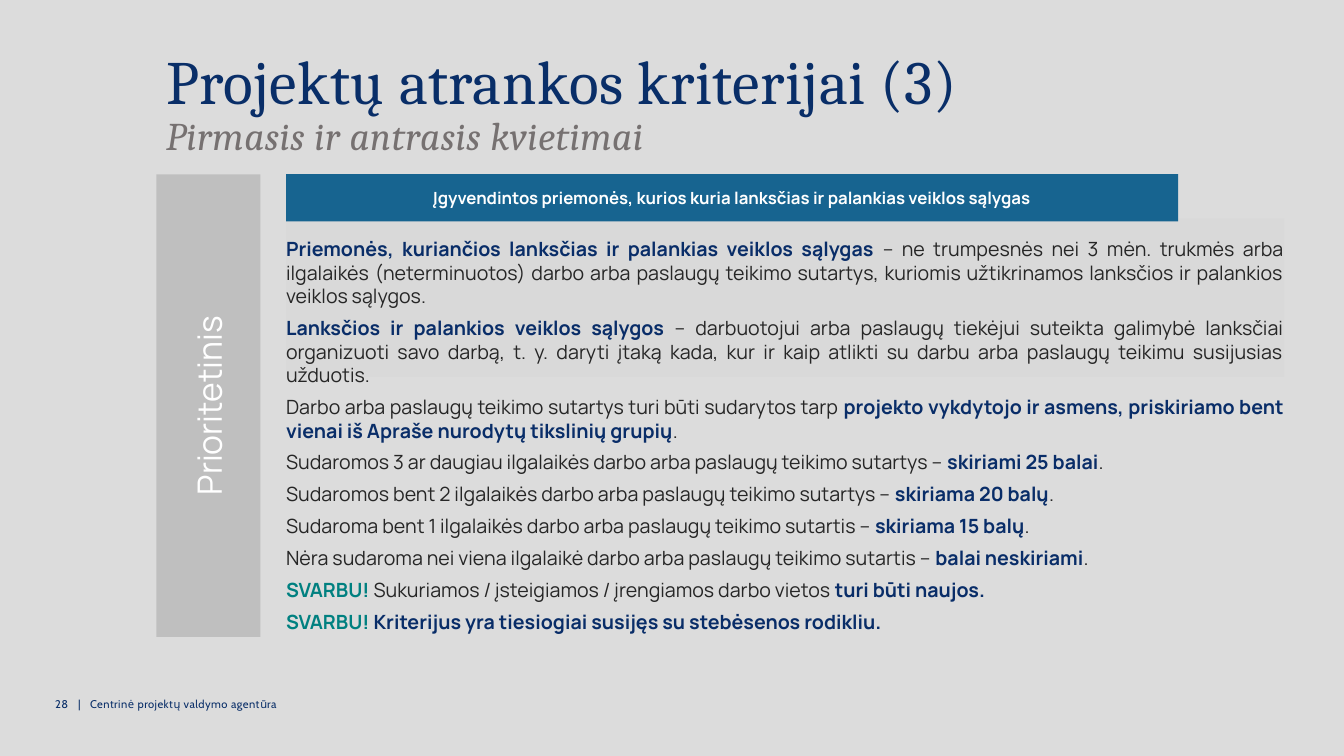
import pptx
import pptx.util
import pptx.dml.color
import pptx.enum.shapes
import pptx.enum.text
import pptx.oxml.ns
import lxml.etree

Cm, Pt = pptx.util.Cm, pptx.util.Pt
ALIGN = pptx.enum.text.PP_ALIGN
ANCHOR = pptx.enum.text.MSO_ANCHOR

# Content
HEAD = "Projektų atrankos kriterijai (3)"
SUB = "Pirmasis ir antrasis kvietimai"
BAND = "Įgyvendintos priemonės, kurios kuria lanksčias ir palankias veiklos sąlygas"
SIDE = "Prioritetinis"
FOOT = "28\t|\tCentrinė projektų valdymo agentūra"
# Each paragraph is a list of (style, text)
BODY = [
    [("key", "Priemonės, kuriančios lanksčias ir palankias veiklos sąlygas "),
     ("plain", "– ne trumpesnės nei 3 mėn. trukmės arba ilgalaikės (neterminuotos) "
               "darbo arba paslaugų teikimo sutartys, kuriomis užtikrinamos "
               "lanksčios ir palankios veiklos sąlygos.")],
    [("key", "Lanksčios ir palankios veiklos sąlygos "),
     ("plain", "– darbuotojui arba paslaugų tiekėjui suteikta galimybė lanksčiai "
               "organizuoti savo darbą, t. y. daryti įtaką kada, kur ir kaip atlikti "
               "su darbu arba paslaugų teikimu susijusias užduotis.")],
    [("plain", "Darbo arba paslaugų teikimo sutartys turi būti sudarytos tarp "),
     ("key", "projekto vykdytojo ir asmens, priskiriamo bent vienai iš Apraše "
             "nurodytų tikslinių grupių"),
     ("plain", ".")],
    [("plain", "Sudaromos 3 ar daugiau ilgalaikės darbo arba paslaugų teikimo sutartys – "),
     ("key", "skiriami 25 balai"), ("plain", ".")],
    [("plain", "Sudaromos bent 2 ilgalaikės darbo arba paslaugų teikimo sutartys – "),
     ("key", "skiriama 20 balų"), ("plain", ".")],
    [("plain", "Sudaroma bent 1 ilgalaikės darbo arba paslaugų teikimo sutartis – "),
     ("key", "skiriama 15 balų"), ("plain", ".")],
    [("plain", "Nėra sudaroma nei viena ilgalaikė darbo arba paslaugų teikimo sutartis – "),
     ("key", "balai neskiriami"), ("plain", ".")],
    [("alert", "SVARBU! "),
     ("plain", "Sukuriamos / įsteigiamos / įrengiamos darbo vietos "),
     ("key", "turi būti naujos.")],
    [("alert", "SVARBU! "),
     ("key", "Kriterijus yra tiesiogiai susijęs su stebėsenos rodikliu.")],
]

HUES = {"back": "DCDCDC", "panel": "D9D9D9", "band": "176490", "side": "BFBFBF",
        "white": "FFFFFF", "key": "092D68", "plain": "262626", "alert": "008080",
        "head": "092E68", "sub": "767171"}

# Layout in cm
LEFT, TOP = 3.94, 4.39
COL, WIDE = 7.21, 25.15
BASE = 16.05
TABS = (0.58, 0.88)


def hue(name):
    return pptx.dml.color.RGBColor.from_string(HUES[name])


def write(par, text, font="Manrope", size=14, color="plain", bold=False,
          slant=False, space=0):
    run = par.add_run()
    run.text = text
    face = run.font
    face.name, face.size = font, Pt(size)
    face.bold, face.italic = bold, slant
    face.color.rgb = hue(color)
    if space:
        run._r.get_or_add_rPr().set("spc", str(space))


def block(x, y, w, h, fill):
    shape = slide.shapes.add_shape(pptx.enum.shapes.MSO_SHAPE.RECTANGLE,
                                   Cm(x), Cm(y), Cm(w), Cm(h))
    shape.shadow.inherit = False
    shape.fill.solid()
    shape.fill.fore_color.rgb = hue(fill)
    shape.line.fill.background()
    frame = shape.text_frame
    frame.word_wrap = True
    frame.vertical_anchor = ANCHOR.MIDDLE
    frame.paragraphs[0].alignment = ALIGN.CENTER
    return shape


def box(x, y, w, h):
    frame = slide.shapes.add_textbox(Cm(x), Cm(y), Cm(w), Cm(h)).text_frame
    frame.word_wrap = True
    frame.vertical_anchor = ANCHOR.TOP
    return frame


def line(frame, count):
    return frame.paragraphs[0] if count == 0 else frame.add_paragraph()


deck = pptx.Presentation()
deck.slide_width, deck.slide_height = Cm(33.87), Cm(19.05)
slide = deck.slides.add_slide(deck.slide_layouts[6])
slide.background.fill.solid()
slide.background.fill.fore_color.rgb = hue("back")

# Panel, band and side label
block(COL, 5.51, WIDE, 3.99, "panel")
band = block(COL, TOP, 22.48, 1.19, "band")
write(band.text_frame.paragraphs[0], BAND, size=12, color="white", bold=True)
side = block(LEFT, TOP, 2.62, BASE - TOP, "side")
side.rotation = 180
side.text_frame._txBody.bodyPr.set("vert", "vert")
write(side.text_frame.paragraphs[0], SIDE, size=24, color="white")

# Criteria
body = box(COL, 5.97, WIDE, BASE - 5.97)
body.auto_size = pptx.enum.text.MSO_AUTO_SIZE.SHAPE_TO_FIT_TEXT
body.margin_left = body.margin_right = body.margin_top = body.margin_bottom = 0
for count, runs in enumerate(BODY):
    par = line(body, count)
    par.alignment = ALIGN.JUSTIFY
    par.space_after = Pt(6)
    for style, text in runs:
        write(par, text, color=style, bold=style != "plain")

# Title and subtitle
title = box(LEFT, 1.32, 28.45, 2.62)
for count, (text, size, color) in enumerate([(HEAD, 44, "head"), (SUB, 28, "sub")]):
    par = line(title, count)
    par.line_spacing = 0.8
    par.space_after = Pt(3)
    write(par, text, font="Cambria", size=size, color=color,
          slant=color == "sub", space=40)

# Footer with tab stops
par = box(1.14, 17.45, 8.13, 1.02).paragraphs[0]
stops = lxml.etree.SubElement(par._p.get_or_add_pPr(), pptx.oxml.ns.qn("a:tabLst"))
for stop in TABS:
    lxml.etree.SubElement(stops, pptx.oxml.ns.qn("a:tab"), pos=str(int(Cm(stop))), algn="l")
write(par, FOOT, font="Cabin", size=8, color="head", space=30)

deck.save("out.pptx")
